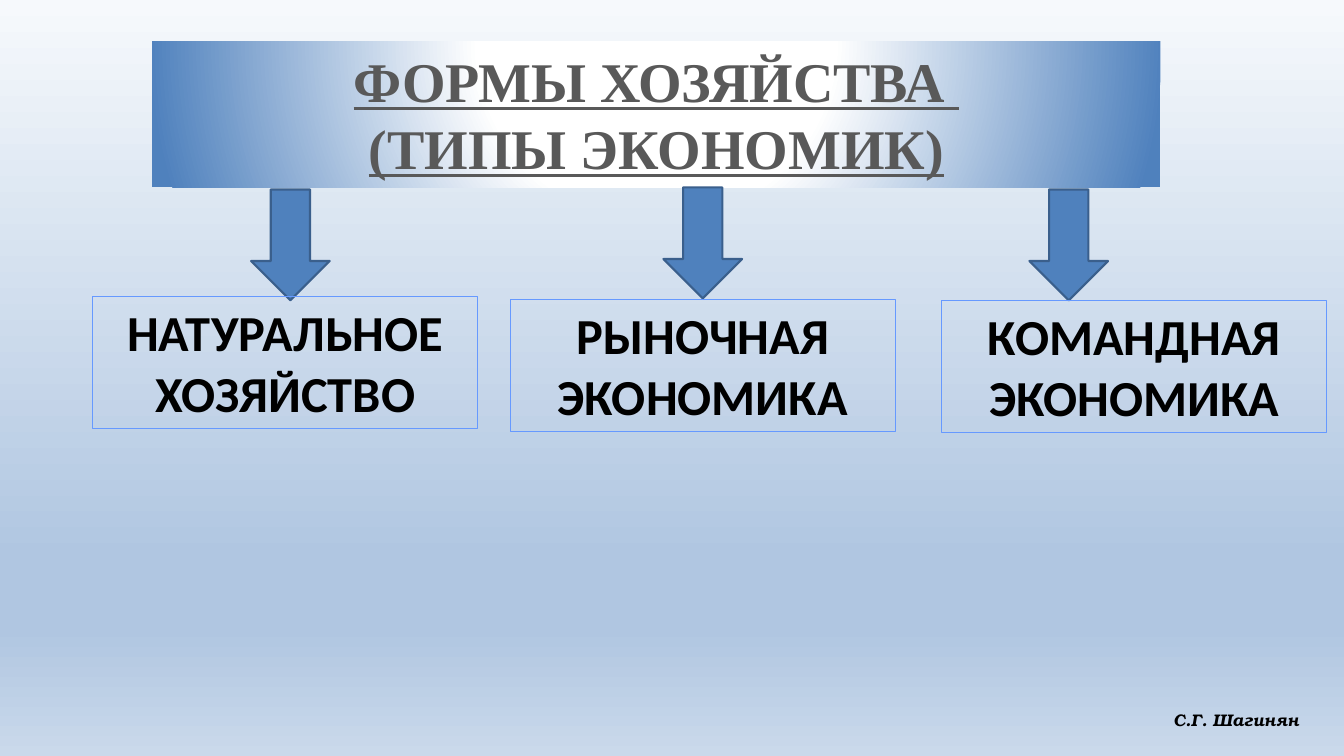
from lxml.etree import SubElement
from pptx import Presentation
from pptx.dml.color import RGBColor
from pptx.enum.shapes import MSO_SHAPE
from pptx.enum.text import MSO_ANCHOR, MSO_AUTO_SIZE, PP_ALIGN
from pptx.oxml.ns import qn
from pptx.util import Inches, Pt

BLUE = "4F81BD"


def color(hex_string):
    return RGBColor.from_string(hex_string)


def set_gradient(fill, owner, stops):
    """Give the fill these (percent, colour) stops and return its gradFill element."""
    fill.gradient()
    gradient = next(owner.iter(qn("a:gradFill")))
    for child in list(gradient):
        gradient.remove(child)
    stop_list = SubElement(gradient, qn("a:gsLst"))
    for percent, hex_string in stops:
        stop = SubElement(stop_list, qn("a:gs"), pos=str(percent * 1000))
        SubElement(stop, qn("a:srgbClr"), val=hex_string)
    return gradient


class SlideBuilder:
    def __init__(self, slide):
        self.slide = slide

    def background(self, stops):
        gradient = set_gradient(self.slide.background.fill, self.slide.element, stops)
        SubElement(gradient, qn("a:lin"), ang="5400000", scaled="0")

    def shape(self, kind, left, top, width, height):
        shape = self.slide.shapes.add_shape(
            kind, Inches(left), Inches(top), Inches(width), Inches(height))
        shape.shadow.inherit = False
        return shape

    def outline(self, shape, hex_string, width):
        shape.line.color.rgb = color(hex_string)
        shape.line.width = Pt(width)

    def add_text(self, shape, lines, size, font, hex_string,
                 align=PP_ALIGN.CENTER, wrap=True, underline=None, italic=None):
        frame = shape.text_frame
        frame.word_wrap = wrap
        frame.auto_size = MSO_AUTO_SIZE.SHAPE_TO_FIT_TEXT
        frame.vertical_anchor = MSO_ANCHOR.TOP
        for index, line in enumerate(lines):
            paragraph = frame.add_paragraph() if index else frame.paragraphs[0]
            paragraph.alignment = align
            run = paragraph.add_run()
            run.text = line
            run.font.size = Pt(size)
            run.font.name = font
            run.font.bold = True
            run.font.italic = italic
            run.font.underline = underline
            run.font.color.rgb = color(hex_string)

    def banner(self, lines):
        banner = self.shape(MSO_SHAPE.RECTANGLE, 1.51, 0.41, 10, 1.45)
        gradient = set_gradient(banner.fill, banner.element,
                                [(0, "FFFFFF"), (35, "FFFFFF"), (100, BLUE)])
        circle = SubElement(gradient, qn("a:path"), path="circle")
        SubElement(circle, qn("a:fillToRect"),
                   l="50000", t="-80000", r="50000", b="180000")
        banner.line.fill.background()
        self.add_text(banner, lines, 40, "Times New Roman", "595959", underline=True)

    def arrow(self, left, top):
        arrow = self.shape(MSO_SHAPE.DOWN_ARROW, left, top, 0.78, 1.1)
        arrow.fill.solid()
        arrow.fill.fore_color.rgb = color(BLUE)
        self.outline(arrow, "3A5F8C", 1.5)

    def economy(self, name, left, top):
        economy = self.shape(MSO_SHAPE.RECTANGLE, left, top, 3.82, 1.31)
        economy.fill.background()
        self.outline(economy, "6699FF", 0.75)
        self.add_text(economy, [name], 36, "Calibri", "000000")

    def author(self, name):
        author = self.slide.shapes.add_textbox(
            Inches(11.54), Inches(6.99), Inches(1.45), Inches(0.3))
        self.add_text(author, [name], 12, "TeX Gyre Bonum", "000000",
                      align=PP_ALIGN.LEFT, wrap=False, italic=True)


def main():
    deck = Presentation()
    deck.slide_width, deck.slide_height = Inches(13.33), Inches(7.5)
    builder = SlideBuilder(deck.slides.add_slide(deck.slide_layouts[6]))

    builder.background([(0, "F6F9FC"), (74, "B0C6E1"), (83, "B0C6E1"), (100, "CAD9EB")])
    builder.banner(["ФОРМЫ ХОЗЯЙСТВА ", "(ТИПЫ ЭКОНОМИК)"])
    builder.author("С.Г. Шагинян")

    economies = [
        ("НАТУРАЛЬНОЕ ХОЗЯЙСТВО", (2.49, 1.88), (0.92, 2.94)),
        ("РЫНОЧНАЯ ЭКОНОМИКА", (6.58, 1.86), (5.06, 2.97)),
        ("КОМАНДНАЯ ЭКОНОМИКА", (10.21, 1.88), (9.34, 2.98)),
    ]
    for name, arrow_corner, box_corner in economies:
        builder.arrow(*arrow_corner)
        builder.economy(name, *box_corner)

    deck.save("out.pptx")


if __name__ == "__main__":
    main()
